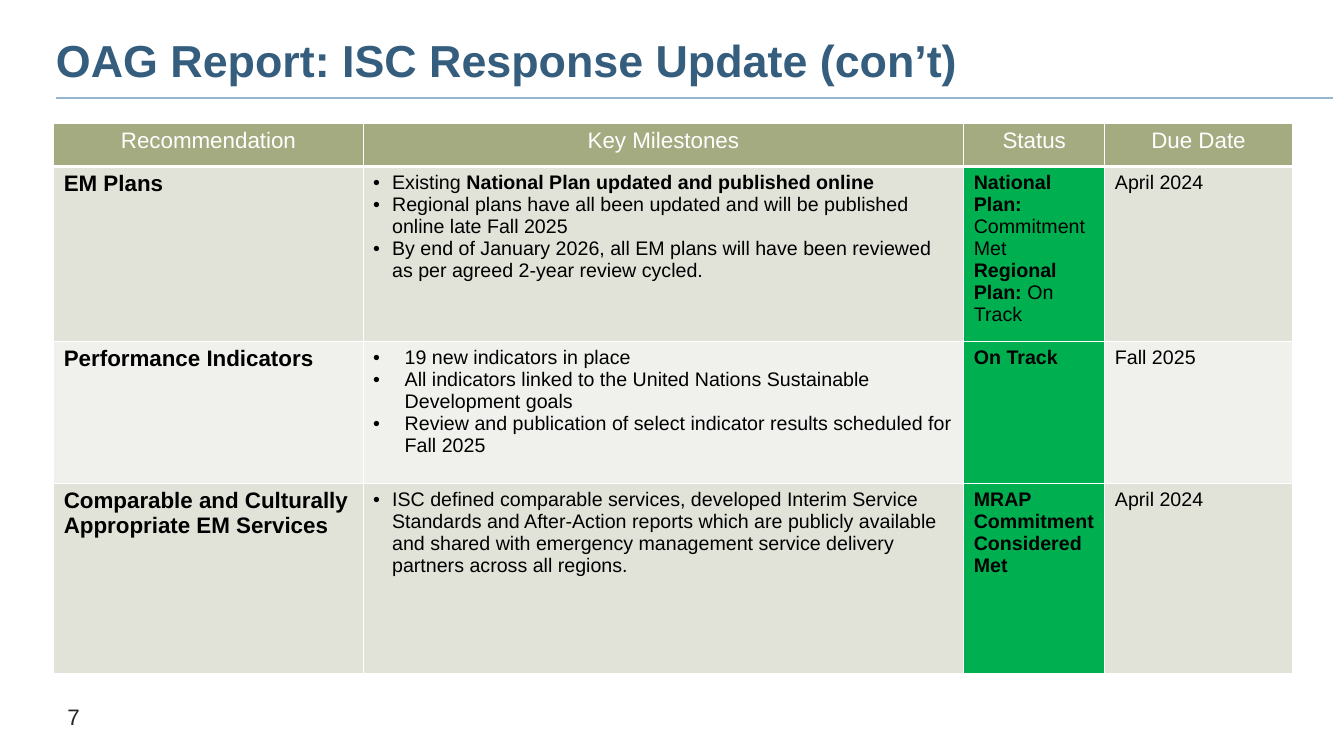
from lxml import etree
from pptx import Presentation
from pptx.dml.color import RGBColor
from pptx.enum.shapes import MSO_CONNECTOR as CONNECTOR
from pptx.enum.text import MSO_ANCHOR as ANCHOR, MSO_AUTO_SIZE as AUTO_SIZE, PP_ALIGN as ALIGN
from pptx.oxml.ns import qn
from pptx.util import Pt

FONT = "Arial"
NAVY = RGBColor(0x35, 0x5D, 0x7E)
SKY = RGBColor(0x94, 0xB6, 0xD2)
SAGE = RGBColor(0xA5, 0xAB, 0x81)
BAND_DARK = RGBColor(0xE1, 0xE2, 0xD8)
BAND_LIGHT = RGBColor(0xF0, 0xF1, 0xED)
GREEN = RGBColor(0x00, 0xB0, 0x50)
GREY = RGBColor(0x26, 0x26, 0x26)
BLACK = RGBColor(0, 0, 0)
WHITE = RGBColor(0xFF, 0xFF, 0xFF)

COL_WIDTHS = [221, 429, 100.8, 133.8]
ROW_HEIGHTS = [31, 117.5, 101.5, 136]
HEADINGS = ["Recommendation", "Key Milestones", "Status", "Due Date"]

# Each paragraph is a list of (text, bold) runs.
# Each row: recommendation, bullet indent, milestones, status, due date.
ROWS = [
    ("EM Plans", 13.5, [
        [("Existing ", False), ("National Plan updated and published online", True)],
        [("Regional plans have all been updated and will be published online late Fall 2025", False)],
        [("By end of January 2026, all EM plans will have been reviewed as per agreed "
          "2-year review cycled.", False)],
    ], [
        [("National Plan: ", True), ("Commitment Met", False)],
        [("Regional Plan:", True), (" On Track", False)],
    ], "April 2024"),
    ("Performance Indicators", 22.5, [
        [("19 new indicators in place", False)],
        [("All indicators linked to the United Nations Sustainable Development goals", False)],
        [("Review and publication of select indicator results scheduled for Fall 2025", False)],
    ], [[("On Track", True)]], "Fall 2025"),
    ("Comparable and Culturally Appropriate EM Services", 13.5, [
        [("ISC defined comparable services, developed Interim Service Standards and "
          "After-Action reports which are publicly available and shared with emergency "
          "management service delivery partners across all regions.", False)],
    ], [[("MRAP Commitment Considered Met", True)]], "April 2024"),
]


def style_font(font, size, color, bold=False):
    font.name = FONT
    font.size = Pt(size)
    font.bold = bold
    font.color.rgb = color


def add_bullet(p, indent):
    pPr = p._p.get_or_add_pPr()
    pPr.set("marL", str(Pt(indent)))
    pPr.set("indent", str(-Pt(indent)))
    etree.SubElement(pPr, qn("a:buFont")).set("typeface", FONT)
    etree.SubElement(pPr, qn("a:buChar")).set("char", "•")


def set_borders(cell, bottom=1, top=1):
    tcPr = cell._tc.get_or_add_tcPr()
    for side, width in (("L", 1), ("R", 1), ("T", top), ("B", bottom)):
        ln = etree.SubElement(tcPr, qn(f"a:ln{side}"), w=str(Pt(width)))
        fill = etree.SubElement(ln, qn("a:solidFill"))
        etree.SubElement(fill, qn("a:srgbClr"), val=str(WHITE))


def fill_cell(cell, paragraphs, fill, size, color=BLACK, align=ALIGN.LEFT, indent=0):
    cell.fill.solid()
    cell.fill.fore_color.rgb = fill
    tf = cell.text_frame
    for i, runs in enumerate(paragraphs):
        p = tf.add_paragraph() if i else tf.paragraphs[0]
        p.alignment = align
        if indent:
            add_bullet(p, indent)
        for text, bold in runs:
            r = p.add_run()
            r.text = text
            style_font(r.font, size, color, bold)


def add_title(s, left, top, width, height):
    sp = s.shapes.title
    sp.left, sp.top, sp.width, sp.height = Pt(left), Pt(top), Pt(width), Pt(height)
    tf = sp.text_frame
    tf.text = "OAG Report: ISC Response Update (con’t)"
    tf.margin_left = tf.margin_right = tf.margin_top = tf.margin_bottom = 0
    tf.vertical_anchor = ANCHOR.TOP
    tf.auto_size = AUTO_SIZE.NONE
    p = tf.paragraphs[0]
    p.alignment = ALIGN.LEFT
    p.line_spacing = Pt(32)
    style_font(p.runs[0].font, 32, NAVY, True)


def add_title_rule(s, left, top, width):
    line = s.shapes.add_connector(CONNECTOR.STRAIGHT, Pt(left), Pt(top), Pt(left + width), Pt(top))
    line.line.color.rgb = SKY
    line.line.width = Pt(1.5)
    etree.SubElement(line._element.spPr, qn("a:effectLst"))


def add_milestone_table(s, left, top):
    table = s.shapes.add_table(len(ROW_HEIGHTS), len(COL_WIDTHS), Pt(left), Pt(top),
                               Pt(sum(COL_WIDTHS)), Pt(sum(ROW_HEIGHTS))).table
    for column, width in zip(table.columns, COL_WIDTHS):
        column.width = Pt(width)
    for i, (row, height) in enumerate(zip(table.rows, ROW_HEIGHTS)):
        row.height = Pt(height)
        for cell in row.cells:
            set_borders(cell, bottom=3 if i == 0 else 1, top=3 if i == 1 else 1)

    for cell, heading in zip(table.rows[0].cells, HEADINGS):
        fill_cell(cell, [[(heading, False)]], SAGE, 16, WHITE, ALIGN.CENTER)
    for i, (name, indent, milestones, status, due) in enumerate(ROWS):
        band = BAND_LIGHT if i % 2 else BAND_DARK
        cells = table.rows[i + 1].cells
        fill_cell(cells[0], [[(name, True)]], band, 16)
        fill_cell(cells[1], milestones, band, 14, indent=indent)
        fill_cell(cells[2], status, GREEN, 14)
        fill_cell(cells[3], [[(due, False)]], band, 14)


def add_page_number(s, left, top, width, height):
    tf = s.shapes.add_textbox(Pt(left), Pt(top), Pt(width), Pt(height)).text_frame
    tf.word_wrap = True
    tf.text = "7"
    p = tf.paragraphs[0]
    p.alignment = ALIGN.CENTER
    style_font(p.runs[0].font, 16, GREY)


def main():
    prs = Presentation()
    prs.slide_width, prs.slide_height = Pt(960), Pt(540)
    s = prs.slides.add_slide(prs.slide_layouts[5])
    add_page_number(s, 7, 499, 91, 26.6)
    add_title_rule(s, 40, 70, 912)
    add_title(s, 40, 30, 824, 24)
    add_milestone_table(s, 38.4, 88)
    prs.save("out.pptx")


if __name__ == "__main__":
    main()
